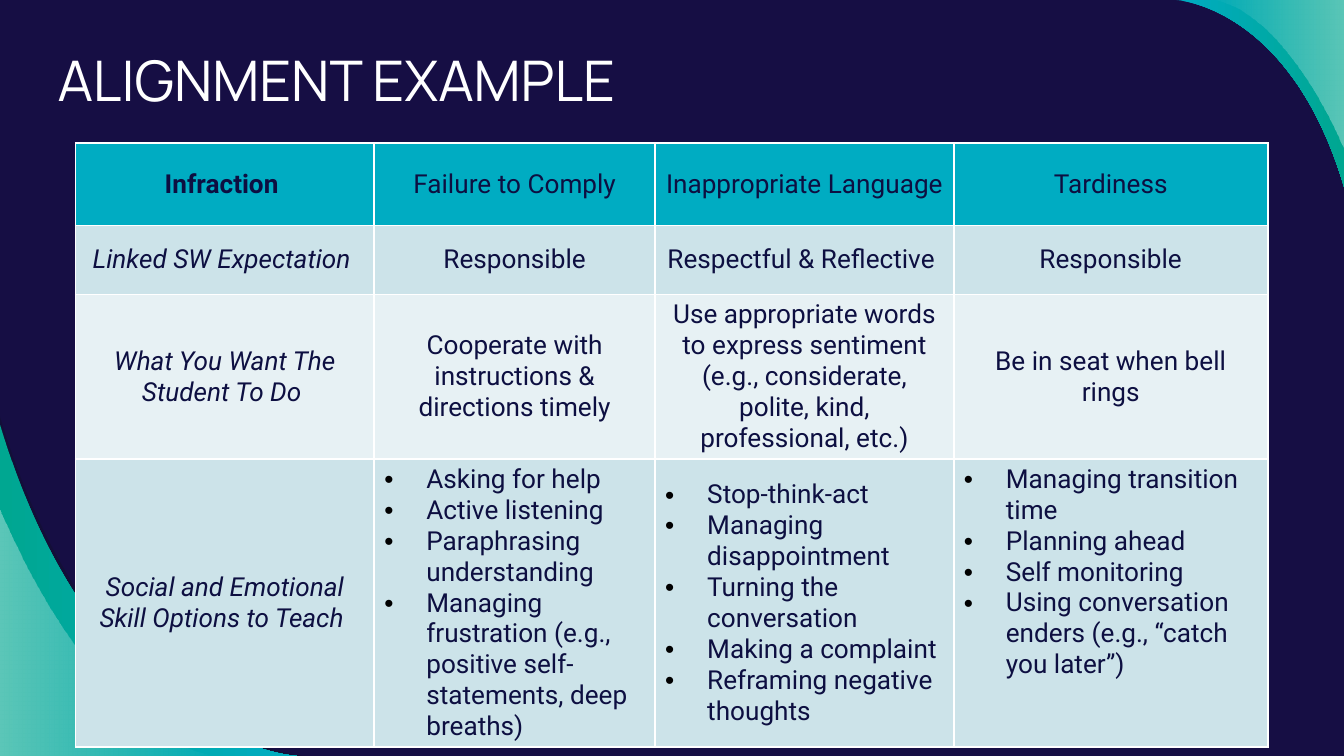
from lxml import etree
from pptx import Presentation
from pptx import util as u
from pptx.dml import color
from pptx.enum import text
from pptx.oxml import ns

WIDTH, HEIGHT = 720, 405
WHITE, NAVY, INK = "FFFFFF", "160E44", "0D0F41"
CYAN, GREEN = "00ACC2", "00A791"
ROW_FILLS = [CYAN, "CCE3E9", "E7F1F4", "CCE3E9"]
COLUMN_WIDTHS = [160, 150.5, 160, 168.2]
ROW_HEIGHTS = [44, 37, 67.7, 144]

ALIGNMENT_ROWS = [
    ["Infraction ", "Failure to Comply", "Inappropriate Language", "Tardiness"],
    ["Linked SW Expectation ", "Responsible", "Respectful & Reflective ", "Responsible"],
    ["What You Want The Student To Do ",
     "Cooperate with instructions & directions timely",
     "Use appropriate words to express sentiment "
     "(e.g., considerate, polite, kind, professional, etc.)",
     "Be in seat when bell rings"],
    ["Social and Emotional Skill Options to Teach ",
     ["Asking for help", "Active listening", "Paraphrasing understanding",
      "Managing frustration (e.g., positive self-statements, deep breaths)"],
     ["Stop-think-act", "Managing disappointment", "Turning the conversation",
      "Making a complaint", "Reframing negative thoughts"],
     ["Managing transition time", "Planning ahead", "Self monitoring",
      "Using conversation enders (e.g., “catch you later”)"]],
]

# Curve control points, the slide corner it encloses, and (colour, opacity) stops
SWOOPS = [
    ([(0, 223.2), (52.6, 399), (163.4, 405), (163.4, 405)], (0, HEIGHT),
     [("12102F", 54)]),
    ([(159, 405), (159, 405), (51.8, 399.6), (0, 227.5)], (0, HEIGHT),
     [(GREEN, 100), (CYAN, 100)]),
    ([(0, 273.6), (0, 273.6), (49.7, 396.7), (116.6, 405)], (0, HEIGHT),
     [(WHITE, 36), (WHITE, 0)]),
    ([(630, 0), (630, 0), (691.2, 2.9), (720, 100)], (WIDTH, 0),
     [(CYAN, 100), (GREEN, 100)]),
    ([(720, 80.6), (720, 80.6), (689.8, 5), (648.7, 0)], (WIDTH, 0),
     [(WHITE, 0), (WHITE, 36)]),
]


def rgb(hex_colour):
    return color.RGBColor.from_string(hex_colour)


def apply(target, values):
    for name, value in values.items():
        setattr(target, name, value)


def add_xml(parent, tag, **attributes):
    return etree.SubElement(parent, ns.qn(tag), attributes)


def bend(shape):
    """Turn the first three straight segments of an outline into one cubic curve."""
    outline = next(shape._element.iter(ns.qn("a:path")))
    segments = outline.findall(ns.qn("a:lnTo"))[:3]
    curve = add_xml(outline, "a:cubicBezTo")
    for segment in segments:
        curve.append(segment[0])
        outline.remove(segment)
    outline.insert(1, curve)


class SlideBuilder:
    margins = dict(margin_left=u.Pt(5.4), margin_right=u.Pt(5.4),
                   margin_top=u.Pt(2.7), margin_bottom=u.Pt(2.7))
    body_font = dict(name="Roboto", size=u.Pt(14))
    title_font = dict(name="Manrope", size=u.Pt(30), bold=False)

    def __init__(self, deck):
        self.slide = deck.slides.add_slide(deck.slide_layouts[5])
        fill = self.slide.background.fill
        fill.solid()
        fill.fore_color.rgb = rgb(NAVY)

    def swoop(self, controls, corner, stops):
        start, *rest = [tuple(map(u.Pt, point)) for point in controls + [corner]]
        builder = self.slide.shapes.build_freeform(*start, scale=1.0)
        builder.add_line_segments(rest, close=True)
        shape = builder.convert_to_shape()
        bend(shape)
        shape.shadow.inherit = False
        shape.line.fill.background()
        if len(stops) == 1:
            shape.fill.solid()
            shape.fill.fore_color.rgb = rgb(stops[0][0])
        else:
            shape.fill.gradient()
            shape.fill.gradient_angle = 0
            for stop, (hex_colour, _) in zip(shape.fill.gradient_stops, stops):
                stop.color.rgb = rgb(hex_colour)
        colours = shape._element.spPr.iter(ns.qn("a:srgbClr"))
        for colour, (_, opacity) in zip(colours, stops):
            if opacity < 100:
                add_xml(colour, "a:alpha", val=str(opacity * 1000))

    def title(self, words):
        """Fill the title placeholder and bring it in front of the swoops."""
        heading = self.slide.shapes.title
        heading._element.getparent().append(heading._element)
        apply(heading, dict(left=u.Pt(23.6), top=u.Pt(17.3),
                            width=u.Pt(656), height=u.Pt(59.8)))
        frame = heading.text_frame
        inset = u.Pt(7.2)
        apply(frame, dict(text=words, word_wrap=True,
                          auto_size=text.MSO_AUTO_SIZE.NONE,
                          vertical_anchor=text.MSO_ANCHOR.TOP,
                          margin_left=inset, margin_right=inset,
                          margin_top=inset, margin_bottom=inset))
        paragraph = frame.paragraphs[0]
        apply(paragraph, dict(alignment=text.PP_ALIGN.LEFT, line_spacing=1.0))
        apply(paragraph.runs[0].font, self.title_font)
        paragraph.runs[0].font.color.rgb = rgb(WHITE)

    def table(self, rows):
        frame = self.slide.shapes.add_table(
            len(rows), len(rows[0]), u.Pt(40.5), u.Pt(76.7),
            u.Pt(sum(COLUMN_WIDTHS)), u.Pt(sum(ROW_HEIGHTS)))
        grid = frame.table
        grid.horz_banding = False
        for column, width in zip(grid.columns, COLUMN_WIDTHS):
            column.width = u.Pt(width)
        for row, height in zip(grid.rows, ROW_HEIGHTS):
            row.height = u.Pt(height)
        for r, entries in enumerate(rows):
            for c, entry in enumerate(entries):
                emphasis = dict(bold=r == 0 and c == 0, italic=r > 0 and c == 0)
                self.cell(grid.cell(r, c), entry, ROW_FILLS[r], emphasis)
        # The shorter last list starts level with the first one
        grid.cell(len(rows) - 1, len(rows[0]) - 1).vertical_anchor = text.MSO_ANCHOR.TOP

    def cell(self, cell, entry, fill, emphasis):
        apply(cell, self.margins)
        cell.vertical_anchor = text.MSO_ANCHOR.MIDDLE
        for side in ("a:lnL", "a:lnR", "a:lnT", "a:lnB"):
            border = add_xml(cell._tc.get_or_add_tcPr(), side, w=str(u.Pt(1)))
            add_xml(add_xml(border, "a:solidFill"), "a:srgbClr", val=WHITE)
        cell.fill.solid()
        cell.fill.fore_color.rgb = rgb(fill)
        bulleted = isinstance(entry, list)
        cell.text_frame.text = "\n".join(entry) if bulleted else entry
        for paragraph in cell.text_frame.paragraphs:
            if bulleted:
                self.bullet(paragraph)
            else:
                paragraph.alignment = text.PP_ALIGN.CENTER
            font = paragraph.runs[0].font
            apply(font, {**self.body_font, **emphasis})
            font.color.rgb = rgb(INK)

    def bullet(self, paragraph):
        paragraph.alignment = text.PP_ALIGN.LEFT
        properties = paragraph._p.get_or_add_pPr()
        indent = u.Pt(22.5)
        properties.set("marL", str(indent))
        properties.set("indent", str(-indent))
        add_xml(add_xml(properties, "a:buClr"), "a:srgbClr", val="000000")
        add_xml(properties, "a:buFont", typeface="Arial")
        add_xml(properties, "a:buChar", char="•")


def main():
    deck = Presentation()
    deck.slide_width, deck.slide_height = u.Pt(WIDTH), u.Pt(HEIGHT)
    builder = SlideBuilder(deck)
    for controls, corner, stops in SWOOPS:
        builder.swoop(controls, corner, stops)
    builder.title("ALIGNMENT EXAMPLE")
    builder.table(ALIGNMENT_ROWS)
    deck.save("out.pptx")


if __name__ == "__main__":
    main()
